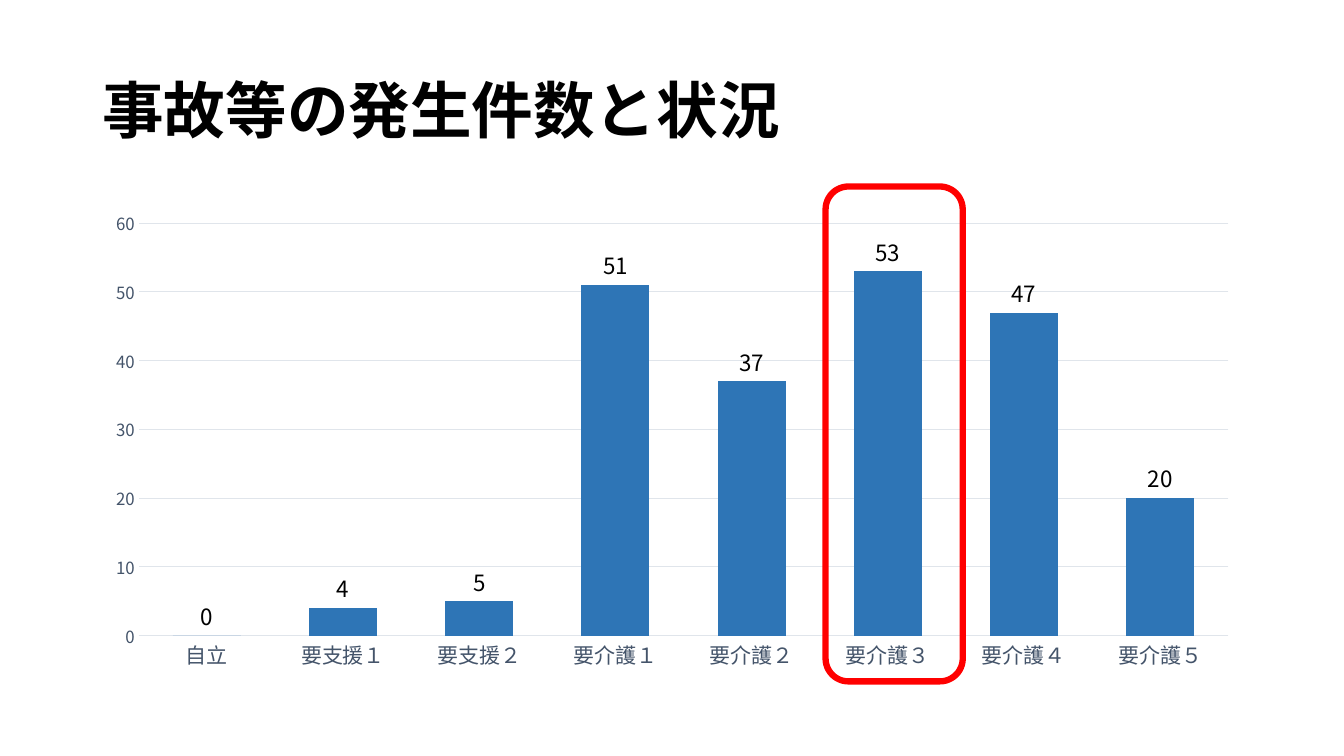
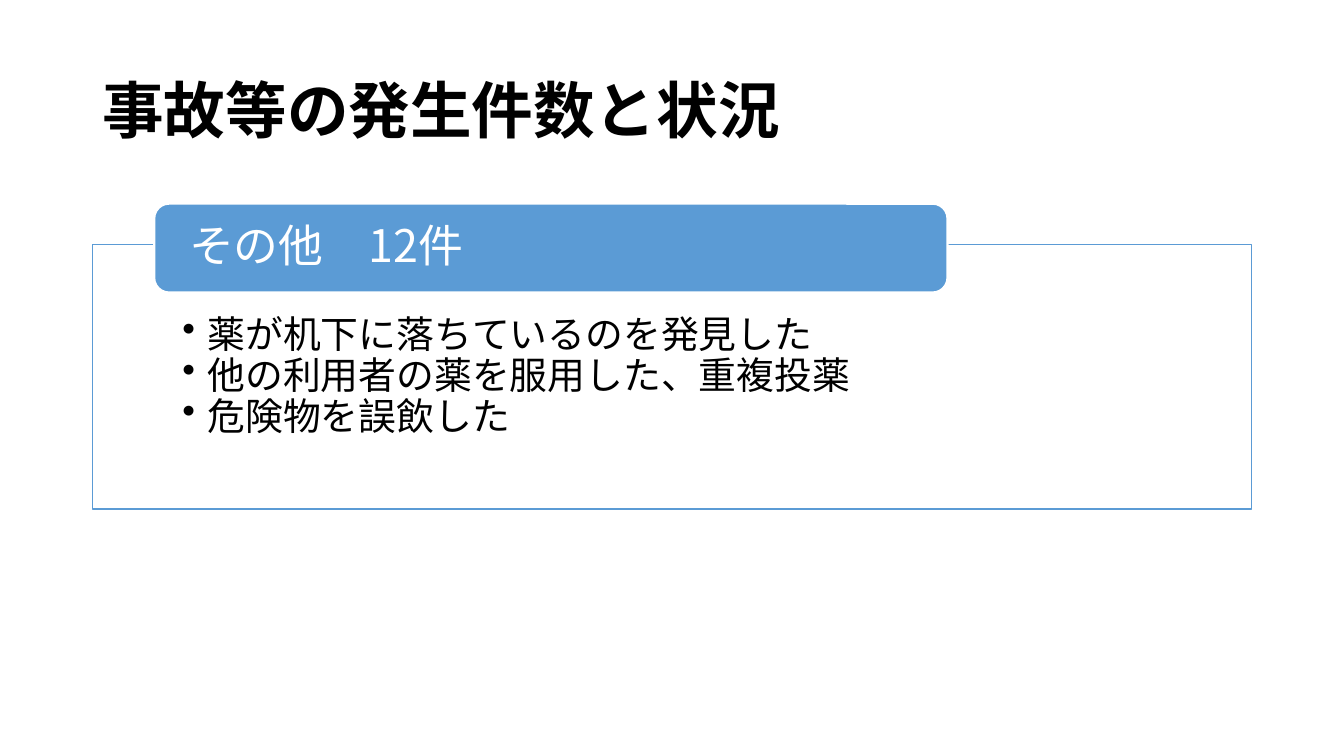
from lxml import etree
from pptx import Presentation
from pptx.chart.data import CategoryChartData
from pptx.dml.color import RGBColor
from pptx.enum.chart import XL_CHART_TYPE as CT, XL_LABEL_POSITION as LP, XL_TICK_MARK as TM
from pptx.enum.shapes import MSO_SHAPE as MS
from pptx.enum.text import MSO_ANCHOR as MA, PP_ALIGN as PA
from pptx.oxml import parse_xml
from pptx.oxml.ns import nsdecls, qn
from pptx.util import Pt

FONT = "Noto Sans CJK JP"
BLACK, WHITE, SLATE, GRID = "000000", "FFFFFF", "44546A", "E0E5EB"
BLUE, BAR, RED = "5B9BD5", "2E75B6", "FF0000"
TITLE_BOX = (66, 28.75, 828, 104.4)
CHART_BOX = (66, 144, 828, 342.7)
PANEL_BOX = (66, 174.5, 828, 189.2)


def color(value):
    return RGBColor.from_string(value)


def set_font(font, size, fill):
    font.name, font.size = FONT, Pt(size)
    font.color.rgb = color(fill)


def set_line(line, fill, width):
    line.color.rgb = color(fill)
    line.width = Pt(width)


def add_text(s, box, lines, size, fill=BLACK, bold=False, anchor=MA.MIDDLE,
             insets=(7.2, 3.6, 7.2, 3.6), bullet=None, indent=0):
    tf = s.shapes.add_textbox(*map(Pt, box)).text_frame
    tf.word_wrap, tf.vertical_anchor = True, anchor
    tf.margin_left, tf.margin_top, tf.margin_right, tf.margin_bottom = map(Pt, insets)
    for i, line in enumerate(lines):
        p = tf.add_paragraph() if i else tf.paragraphs[0]
        p.alignment, p.line_spacing = PA.LEFT, 0.9
        r = p.add_run()
        r.text = line
        set_font(r.font, size, fill)
        r.font.bold = bold
        etree.SubElement(r.font._element, qn("a:ea")).set("typeface", FONT)
        if bullet:
            pPr = p._p.get_or_add_pPr()
            pPr.set("marL", str(Pt(indent)))
            pPr.set("indent", str(-Pt(indent)))
            etree.SubElement(pPr, qn("a:buChar")).set("char", bullet)


def add_box(s, shape, box, fill=None, line=BLUE, width=1, opacity=None):
    sp = s.shapes.add_shape(shape, *map(Pt, box))
    sp.shadow.inherit = False
    set_line(sp.line, line, width)
    if fill is None:
        sp.fill.background()
        return
    sp.fill.solid()
    sp.fill.fore_color.rgb = color(fill)
    if opacity is not None:
        rgb = sp._element.spPr.find(qn("a:solidFill"))[0]
        etree.SubElement(rgb, qn("a:alpha")).set("val", str(opacity * 1000))


def add_slide(prs, title):
    s = prs.slides.add_slide(prs.slide_layouts[6])
    add_text(s, TITLE_BOX, [title], 44, bold=True)
    return s


def set_plot_area(chart, **fractions):
    parts = "".join(f'<c:{k} val="{v}"/>' for k, v in fractions.items())
    plot_area = chart._chartSpace.chart.plotArea
    for old in plot_area.findall(qn("c:layout")):
        plot_area.remove(old)
    plot_area.insert(0, parse_xml(
        f'<c:layout {nsdecls("c")}><c:manualLayout><c:layoutTarget val="inner"/>'
        f'<c:xMode val="edge"/><c:yMode val="edge"/>{parts}</c:manualLayout></c:layout>'))


def add_bar_chart(s, box, cats, vals):
    data = CategoryChartData()
    data.categories = cats
    data.add_series("Series 1", vals)
    chart = s.shapes.add_chart(CT.COLUMN_CLUSTERED, *map(Pt, box), data).chart
    chart.has_legend = chart.has_title = False
    set_font(chart.font, 10, BLACK)
    set_plot_area(chart, x=0.04, y=0.045, w=0.94, h=0.86)

    for axis, size in ((chart.category_axis, 15), (chart.value_axis, 12)):
        axis.major_tick_mark = axis.minor_tick_mark = TM.NONE
        set_font(axis.tick_labels.font, size, SLATE)
    set_line(chart.category_axis.format.line, GRID, 0.75)
    axis = chart.value_axis
    axis.minimum_scale, axis.maximum_scale, axis.major_unit = 0, 60, 10
    axis.format.line.fill.background()
    set_line(axis.major_gridlines.format.line, GRID, 0.75)

    plot = chart.plots[0]
    plot.gap_width, plot.overlap, plot.vary_by_categories = 100, -24, False
    series = plot.series[0]
    series.format.fill.solid()
    series.format.fill.fore_color.rgb = color(BAR)
    labels = series.data_labels
    labels.show_value, labels.position = True, LP.OUTSIDE_END
    set_font(labels.font, 16, BLACK)


def add_highlight(s, chart_box):
    x, y, w, h = chart_box
    add_box(s, MS.ROUNDED_RECTANGLE, (x + 523.7, y - 10.8, 98, h + 10.8), line=RED, width=4.5)


def add_panel(s, box, heading, items):
    x, y, w, h = box
    add_box(s, MS.RECTANGLE, box, fill=WHITE, opacity=90)
    add_text(s, box, items, 27, anchor=MA.TOP, insets=(64.3, 51, 64.3, 5.8),
             bullet="•", indent=18)
    tab = (x + 44.2, y - 29, 566.6, 63.4)
    add_box(s, MS.ROUNDED_RECTANGLE, tab, fill=BLUE, line=WHITE, width=1.5)
    inner = (tab[0] + 3, tab[1] + 3, tab[2] - 6, tab[3] - 6)
    add_text(s, inner, [heading], 32, fill=WHITE, insets=(21.9, 0, 21.9, 0))


def main():
    prs = Presentation()
    prs.slide_width, prs.slide_height = Pt(960), Pt(540)
    title = "事故等の発生件数と状況"

    s = add_slide(prs, title)
    add_bar_chart(s, CHART_BOX,
                  ["自立", "要支援１", "要支援２", "要介護１",
                   "要介護２", "要介護３", "要介護４", "要介護５"],
                  [0, 4, 5, 51, 37, 53, 47, 20])
    add_highlight(s, CHART_BOX)

    s = add_slide(prs, title)
    add_panel(s, PANEL_BOX, "その他　12件",
              ["薬が机下に落ちているのを発見した",
               "他の利用者の薬を服用した、重複投薬",
               "危険物を誤飲した"])
    prs.save("out.pptx")


if __name__ == "__main__":
    main()
